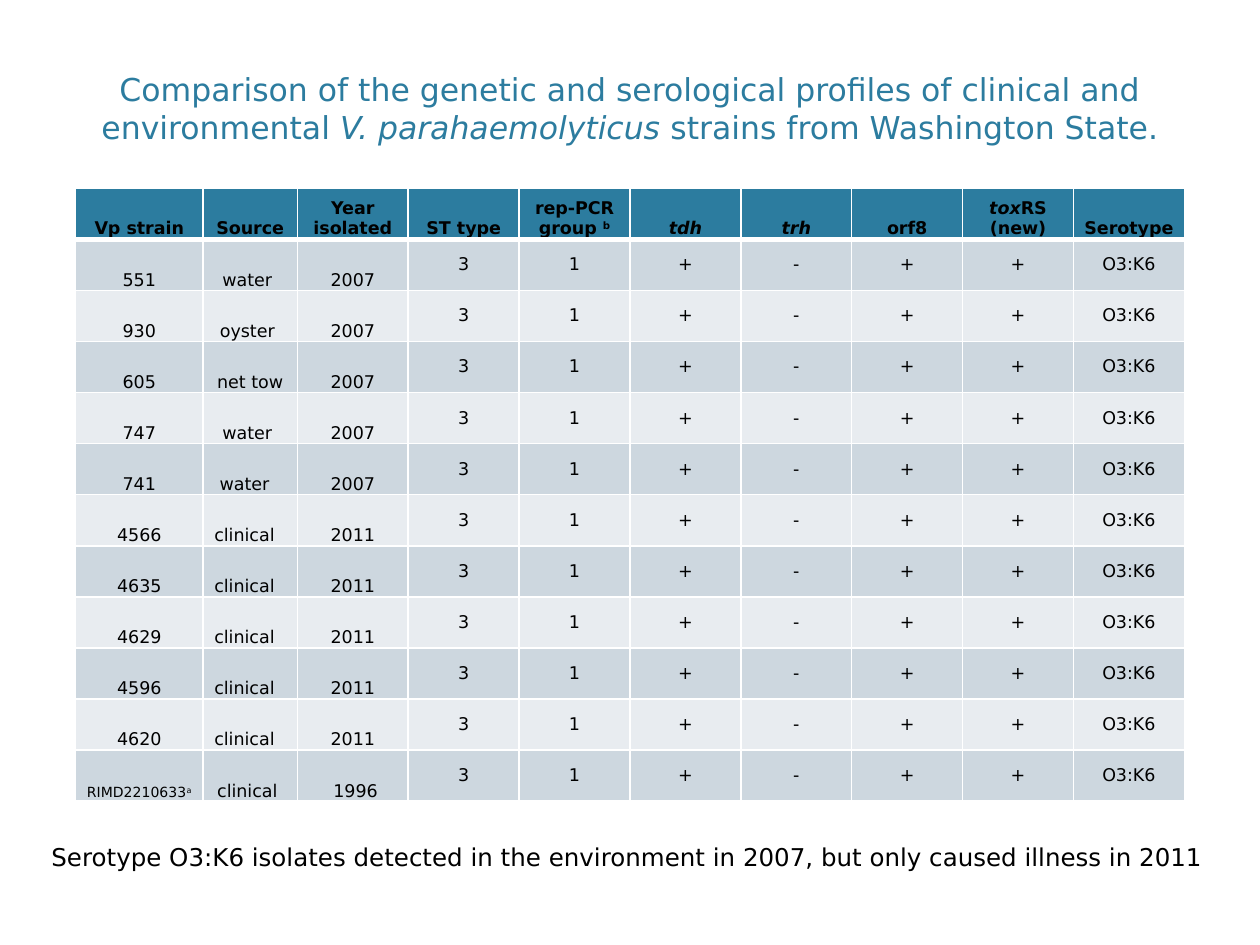
from lxml import etree
from pptx import Presentation
from pptx.dml.color import RGBColor
from pptx.enum.text import MSO_ANCHOR, MSO_AUTO_SIZE, PP_ALIGN
from pptx.oxml.ns import qn
from pptx.util import Pt

CENTER, LEFT = PP_ALIGN.CENTER, PP_ALIGN.LEFT
BOTTOM, MIDDLE = MSO_ANCHOR.BOTTOM, MSO_ANCHOR.MIDDLE
NO_FIT, GROW = MSO_AUTO_SIZE.NONE, MSO_AUTO_SIZE.SHAPE_TO_FIT_TEXT

TEAL = RGBColor(0x2C, 0x7C, 0x9F)
BLACK = RGBColor(0x00, 0x00, 0x00)
WHITE = RGBColor(0xFF, 0xFF, 0xFF)
BAND_DARK = RGBColor(0xCD, 0xD7, 0xDF)
BAND_LIGHT = RGBColor(0xE8, 0xEC, 0xF0)

TITLE = [
    ("Comparison of the genetic and serological profiles of clinical and environmental ", {}),
    ("V. parahaemolyticus", {"italic": True}),
    (" strains from Washington State.", {}),
]
CAPTION = [("Serotype O3:K6 isolates detected in the environment in 2007, "
            "but only caused illness in 2011", {})]

HEADINGS = [
    [("Vp strain", {})],
    [("Source", {})],
    [("Year isolated", {})],
    [("ST type", {})],
    [("rep-PCR group ", {}), ("b", {"superscript": True})],
    [("tdh", {"italic": True})],
    [("trh", {"italic": True})],
    [("orf8", {})],
    [("tox", {"italic": True}), ("RS (new)", {})],
    [("Serotype", {})],
]
REFERENCE_STRAIN = [("RIMD2210633", {"size": 8}), ("a", {"size": 8, "superscript": True})]
# strain, source, year, and how far source and year sit right of centre (points)
ISOLATES = [
    ([("551", {})], "water", "2007", -1.6, 0),
    ([("930", {})], "oyster", "2007", -1.6, 0),
    ([("605", {})], "net tow", "2007", 0, 0),
    ([("747", {})], "water", "2007", -1.6, 0),
    ([("741", {})], "water", "2007", -3.2, 0),
    *[([(strain, {})], "clinical", "2011", -3.2, 0)
      for strain in ("4566", "4635", "4629", "4596", "4620")],
    (REFERENCE_STRAIN, "clinical", "1996", -1.6, 1.6),
]
SHARED_PROFILE = ["3", "1", "+", "-", "+", "+", "O3:K6"]

COLUMN_WIDTHS = [72.72, 54] + [63.36] * 8
ROW_HEIGHT = 29.22
CELL_INSET = 5.04


class SlideBuilder:
    font = "DejaVu Sans"

    def __init__(self, presentation):
        title_only = presentation.slide_layouts[5]
        self.slide = presentation.slides.add_slide(title_only)

    def add_runs(self, frame, runs, size, color=BLACK, align=CENTER, bold=False):
        paragraph = frame.paragraphs[0]
        paragraph.alignment = align
        for text, style in runs:
            run = paragraph.add_run()
            run.text = text
            font = run.font
            font.name = self.font
            font.size = Pt(style.get("size", size))
            font.bold = bold
            font.italic = style.get("italic", False)
            font.color.rgb = color
            if style.get("superscript"):
                run._r.get_or_add_rPr().set("baseline", "30000")

    def title(self, runs, left, top, width, height, space_below):
        title = self.slide.shapes.title
        title.left, title.top = Pt(left), Pt(top)
        title.width, title.height = Pt(width), Pt(height)
        frame = title.text_frame
        frame.auto_size = NO_FIT
        frame.word_wrap = True
        frame.vertical_anchor = BOTTOM
        frame.margin_bottom = Pt(space_below)
        self.add_runs(frame, runs, 18, TEAL)

    def caption(self, runs, left, top, width, height):
        box = self.slide.shapes.add_textbox(Pt(left), Pt(top), Pt(width), Pt(height))
        box.text_frame.word_wrap = True
        box.text_frame.auto_size = GROW
        self.add_runs(box.text_frame, runs, 14, align=LEFT)

    def borders(self, cell, top, bottom):
        properties = cell._tc.get_or_add_tcPr()
        for side, weight in (("lnL", 1), ("lnR", 1), ("lnT", top), ("lnB", bottom)):
            line = etree.SubElement(properties, qn(f"a:{side}"), w=str(Pt(weight)))
            fill = etree.SubElement(line, qn("a:solidFill"))
            etree.SubElement(fill, qn("a:srgbClr"), val=str(WHITE))

    def cell(self, cell, runs, fill, anchor, shift=0, top=1, bottom=1, bold=False):
        self.borders(cell, top, bottom)
        cell.fill.solid()
        cell.fill.fore_color.rgb = fill
        cell.vertical_anchor = anchor
        cell.margin_left = Pt(CELL_INSET + max(2 * shift, 0))
        cell.margin_right = Pt(CELL_INSET + max(-2 * shift, 0))
        cell.margin_top = cell.margin_bottom = 0
        self.add_runs(cell.text_frame, runs, 10, bold=bold)

    def profile_table(self, left, top):
        row_count = len(ISOLATES) + 1
        table = self.slide.shapes.add_table(
            row_count, len(HEADINGS), Pt(left), Pt(top),
            Pt(sum(COLUMN_WIDTHS)), Pt(ROW_HEIGHT * row_count)).table
        for column, width in zip(table.columns, COLUMN_WIDTHS):
            column.width = Pt(width)
        for row in table.rows:
            row.height = Pt(ROW_HEIGHT)

        for column, heading in enumerate(HEADINGS):
            self.cell(table.cell(0, column), heading, TEAL, BOTTOM, bottom=3, bold=True)
        for row, (strain, source, year, source_shift, year_shift) in enumerate(ISOLATES, 1):
            band = BAND_DARK if row % 2 else BAND_LIGHT
            contents = [strain] + [[(text, {})] for text in (source, year, *SHARED_PROFILE)]
            shifts = {1: source_shift, 2: year_shift}
            for column, runs in enumerate(contents):
                self.cell(table.cell(row, column), runs, band,
                          BOTTOM if column < 3 else MIDDLE,
                          shift=shifts.get(column, 0), top=3 if row == 1 else 1)


def main():
    presentation = Presentation()
    presentation.slide_width, presentation.slide_height = Pt(720), Pt(540)
    builder = SlideBuilder(presentation)
    builder.title(TITLE, 43.2, 37.4, 633.6, 70.6, space_below=24.6)
    builder.profile_table(43.2, 107.5)
    builder.caption(CAPTION, 22.3, 477.4, 676, 24.5)
    presentation.save("out.pptx")


if __name__ == "__main__":
    main()
